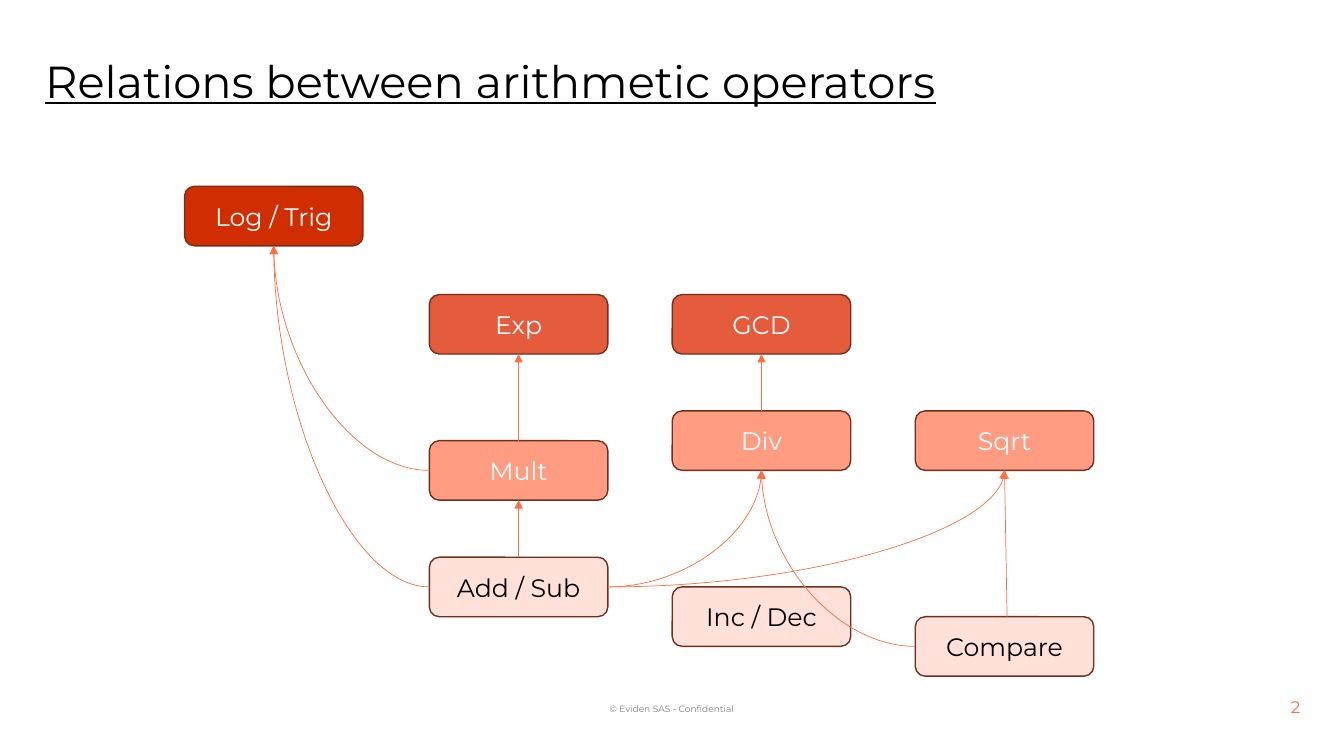
from dataclasses import dataclass

from pptx import Presentation
from pptx.dml.color import RGBColor
from pptx.enum.shapes import MSO_CONNECTOR, MSO_SHAPE
from pptx.enum.text import MSO_ANCHOR, MSO_AUTO_SIZE, PP_ALIGN
from pptx.oxml.ns import qn
from pptx.util import Pt
from lxml.etree import SubElement

TOP, LEFT, BOTTOM, RIGHT = range(4)
BOX_WIDTH, BOX_HEIGHT = 127.5, 42.5
COLUMNS = (131.8, 306.7, 480.2, 653.8)


@dataclass(frozen=True)
class Theme:
    font: str = "Montserrat"
    title_size: float = 32
    box_size: float = 18
    number_size: float = 12
    footer_size: float = 6.5
    black: str = "000000"
    white: str = "FFFFFF"
    grey: str = "808080"
    accent: str = "FF6D43"
    outline: str = "70301D"
    basic: str = "FFE1D9"
    derived: str = "FF9C81"
    advanced: str = "E55C3C"
    complex: str = "D02D00"


class SlideBuilder:
    def __init__(self, slide, theme):
        self.slide = slide
        self.theme = theme

    def fill_text(self, shape, text, size, color, align, underline=False, **frame_format):
        frame = shape.text_frame
        for name, value in frame_format.items():
            setattr(frame, name, value)
        paragraph = frame.paragraphs[0]
        paragraph.alignment = align
        run = paragraph.add_run()
        run.text = text
        font_format = {"name": self.theme.font, "size": Pt(size), "underline": underline}
        for name, value in font_format.items():
            setattr(run.font, name, value)
        run.font.color.rgb = RGBColor.from_string(color)

    def text_box(self, bounds, *content, **frame_format):
        shape = self.slide.shapes.add_textbox(*map(Pt, bounds))
        self.fill_text(shape, *content, **{"word_wrap": True, **frame_format})

    def operator(self, text, column, top, fill):
        shape = self.slide.shapes.add_shape(
            MSO_SHAPE.ROUNDED_RECTANGLE,
            Pt(COLUMNS[column]), Pt(top), Pt(BOX_WIDTH), Pt(BOX_HEIGHT))
        shape.shadow.inherit = False
        shape.fill.solid()
        shape.fill.fore_color.rgb = RGBColor.from_string(fill)
        shape.line.color.rgb = RGBColor.from_string(self.theme.outline)
        shape.line.width = Pt(1)
        color = self.theme.black if fill == self.theme.basic else self.theme.white
        self.fill_text(shape, text, self.theme.box_size, color, PP_ALIGN.CENTER,
                       vertical_anchor=MSO_ANCHOR.MIDDLE)
        return shape

    def arrow(self, kind, start, end):
        connector = self.slide.shapes.add_connector(kind, *start, *end)
        connector.line.color.rgb = RGBColor.from_string(self.theme.accent)
        connector.line.width = Pt(0.5)
        properties = connector._element.spPr
        SubElement(properties.find(qn("a:ln")), qn("a:tailEnd"), type="triangle")
        SubElement(properties, qn("a:effectLst"))
        return connector

    def straight_arrow(self, source, target, shift=0):
        """Link source top to target bottom; a shifted start stays unjoined."""
        x, y = side_middle(source, TOP)
        connector = self.arrow(MSO_CONNECTOR.STRAIGHT, (x + Pt(shift), y),
                               side_middle(target, BOTTOM))
        if not shift:
            connector.begin_connect(source, TOP)
        connector.end_connect(target, BOTTOM)

    def curved_arrow(self, source, side, target):
        """Leave source sideways and enter target from below in one quarter bend."""
        connector = self.arrow(MSO_CONNECTOR.CURVE, side_middle(source, side),
                               side_middle(target, BOTTOM))
        geometry = connector._element.spPr.find(qn("a:prstGeom"))
        geometry.set("prst", "curvedConnector2")


def side_middle(shape, side):
    center_x = shape.left + shape.width // 2
    center_y = shape.top + shape.height // 2
    return {TOP: (center_x, shape.top),
            LEFT: (shape.left, center_y),
            BOTTOM: (center_x, shape.top + shape.height),
            RIGHT: (shape.left + shape.width, center_y)}[side]


def main():
    presentation = Presentation()
    presentation.slide_width, presentation.slide_height = Pt(960), Pt(540)
    slide = presentation.slides.add_slide(presentation.slide_layouts[6])
    theme = Theme()
    builder = SlideBuilder(slide, theme)

    builder.text_box((900, 496, 36, 17.3), "2", theme.number_size, theme.accent,
                     PP_ALIGN.RIGHT, vertical_anchor=MSO_ANCHOR.MIDDLE)
    builder.text_box((434.9, 502.6, 90, 7.9), "© Eviden SAS - Confidential",
                     theme.footer_size, theme.grey, PP_ALIGN.CENTER,
                     vertical_anchor=MSO_ANCHOR.MIDDLE, word_wrap=False,
                     auto_size=MSO_AUTO_SIZE.SHAPE_TO_FIT_TEXT,
                     margin_left=0, margin_right=0, margin_top=0, margin_bottom=0)
    builder.text_box((25.2, 38.2, 904.3, 38.9), "Relations between arithmetic operators",
                     theme.title_size, theme.black, PP_ALIGN.LEFT, True,
                     auto_size=MSO_AUTO_SIZE.SHAPE_TO_FIT_TEXT,
                     margin_top=0, margin_bottom=0)

    operators = (
        ("Add / Sub", 1, 398, theme.basic),
        ("Inc / Dec", 2, 419.2, theme.basic),
        ("Compare", 3, 440.5, theme.basic),
        ("Mult", 1, 314.8, theme.derived),
        ("Div", 2, 293.5, theme.derived),
        ("Sqrt", 3, 293.5, theme.derived),
        ("Exp", 1, 210.4, theme.advanced),
        ("Log / Trig", 0, 133.1, theme.complex),
        ("GCD", 2, 210.4, theme.advanced),
    )
    boxes = {operator[0]: builder.operator(*operator) for operator in operators}

    for source, target, shift in (("Add / Sub", "Mult", 0), ("Mult", "Exp", 0),
                                  ("Div", "GCD", 0), ("Compare", "Sqrt", 1.8)):
        builder.straight_arrow(boxes[source], boxes[target], shift)

    for source, side, target in (("Add / Sub", LEFT, "Log / Trig"),
                                 ("Add / Sub", RIGHT, "Sqrt"),
                                 ("Add / Sub", RIGHT, "Div"),
                                 ("Compare", LEFT, "Div"),
                                 ("Mult", LEFT, "Log / Trig")):
        builder.curved_arrow(boxes[source], side, boxes[target])

    presentation.save("out.pptx")


if __name__ == "__main__":
    main()
